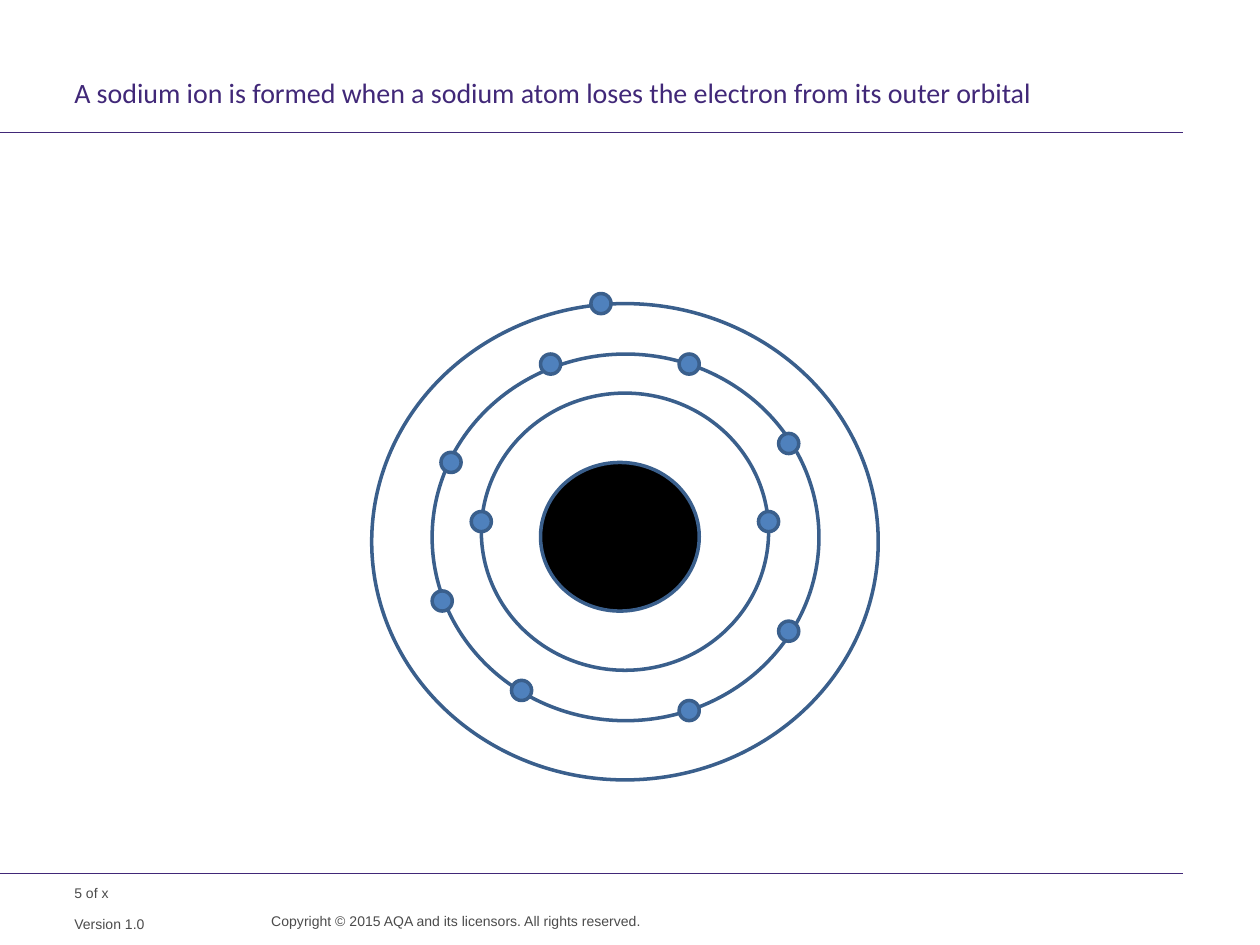
import pptx
import pptx.dml.color
import pptx.enum.shapes
import pptx.enum.text
import pptx.util
from lxml import etree
from pptx.util import Inches

COLORS = {
    "purple": "412878",
    "grey": "4B4B4B",
    "outline": "3A5F8C",
    "electron": "4F81BD",
    "nucleus": "000000",
}
ALIGN = pptx.enum.text.PP_ALIGN

# text, (left, top, width, height), font, size, colour, alignment, line spacing
TEXTS = [
    ("A sodium ion is formed when a sodium atom loses the electron from its outer orbital",
     (0.59, 0.48, 8.8, 0.47), "Calibri", 16, "purple", ALIGN.LEFT, 28),
    ("5 of x", (0.59, 7.02, 1.57, 0.13), "Arial", 8, "grey", ALIGN.LEFT, None),
    ("Copyright © 2015 AQA and its licensors. All rights reserved.",
     (1.75, 7.24, 3.34, 0.26), "Arial", 8, "grey", ALIGN.RIGHT, 10),
    ("Version 1.0", (0.59, 7.26, 1.47, 0.13), "Arial", 8, "grey", ALIGN.LEFT, 10),
]
RULE_TOPS = [1.05, 6.93]
RULE_END = 9.39

NUCLEUS = (4.29, 3.67, 1.26, 1.18)
ELECTRON_SIZE = 0.16
# orbital (left, top, width, height), then left and top of each electron
SHELLS = [
    ((3.82, 3.12, 2.28, 2.2), [(3.74, 4.06), (6.02, 4.06)]),
    ((3.43, 2.81, 3.07, 2.91),
     [(3.5, 3.59), (3.43, 4.69), (4.06, 5.4), (5.39, 5.56),
      (6.18, 4.93), (6.18, 3.44), (4.29, 2.81), (5.39, 2.81)]),
    ((2.95, 2.41, 4.02, 3.78), [(4.69, 2.33)]),
]


def rgb(name):
    return pptx.dml.color.RGBColor.from_string(COLORS[name])


def add_rule(page, top):
    rule = page.shapes.add_connector(
        pptx.enum.shapes.MSO_CONNECTOR.STRAIGHT,
        Inches(0), Inches(top), Inches(RULE_END), Inches(top))
    rule.line.color.rgb = rgb("purple")
    rule.line.width = pptx.util.Pt(0.6)
    etree.SubElement(rule.element.spPr, pptx.oxml.ns.qn("a:effectLst"))


def add_text(page, text, place, font, size, color, align, spacing):
    box = page.shapes.add_textbox(*map(Inches, place))
    frame = box.text_frame
    frame.word_wrap = True
    frame.margin_left = frame.margin_top = frame.margin_right = frame.margin_bottom = 0
    para = frame.paragraphs[0]
    para.alignment = align
    if spacing:
        para.line_spacing = pptx.util.Pt(spacing)
    span = para.add_run()
    span.text = text
    span.font.name = font
    span.font.size = pptx.util.Pt(size)
    span.font.color.rgb = rgb(color)


def add_ellipse(page, place, fill=None):
    ellipse = page.shapes.add_shape(
        pptx.enum.shapes.MSO_SHAPE.OVAL, *map(Inches, place))
    ellipse.shadow.inherit = False
    ellipse.line.color.rgb = rgb("outline")
    ellipse.line.width = pptx.util.Pt(2)
    if fill:
        ellipse.fill.solid()
        ellipse.fill.fore_color.rgb = rgb(fill)
    else:
        ellipse.fill.background()


def main():
    deck = pptx.Presentation()
    deck.slide_width, deck.slide_height = Inches(10), Inches(7.5)
    page = deck.slides.add_slide(deck.slide_layouts[6])
    for top in RULE_TOPS:
        add_rule(page, top)
    for text in TEXTS:
        add_text(page, *text)
    add_ellipse(page, NUCLEUS, "nucleus")
    for orbital, electrons in SHELLS:
        add_ellipse(page, orbital)
        for left, top in electrons:
            add_ellipse(page, (left, top, ELECTRON_SIZE, ELECTRON_SIZE), "electron")
    deck.save("out.pptx")


if __name__ == "__main__":
    main()
